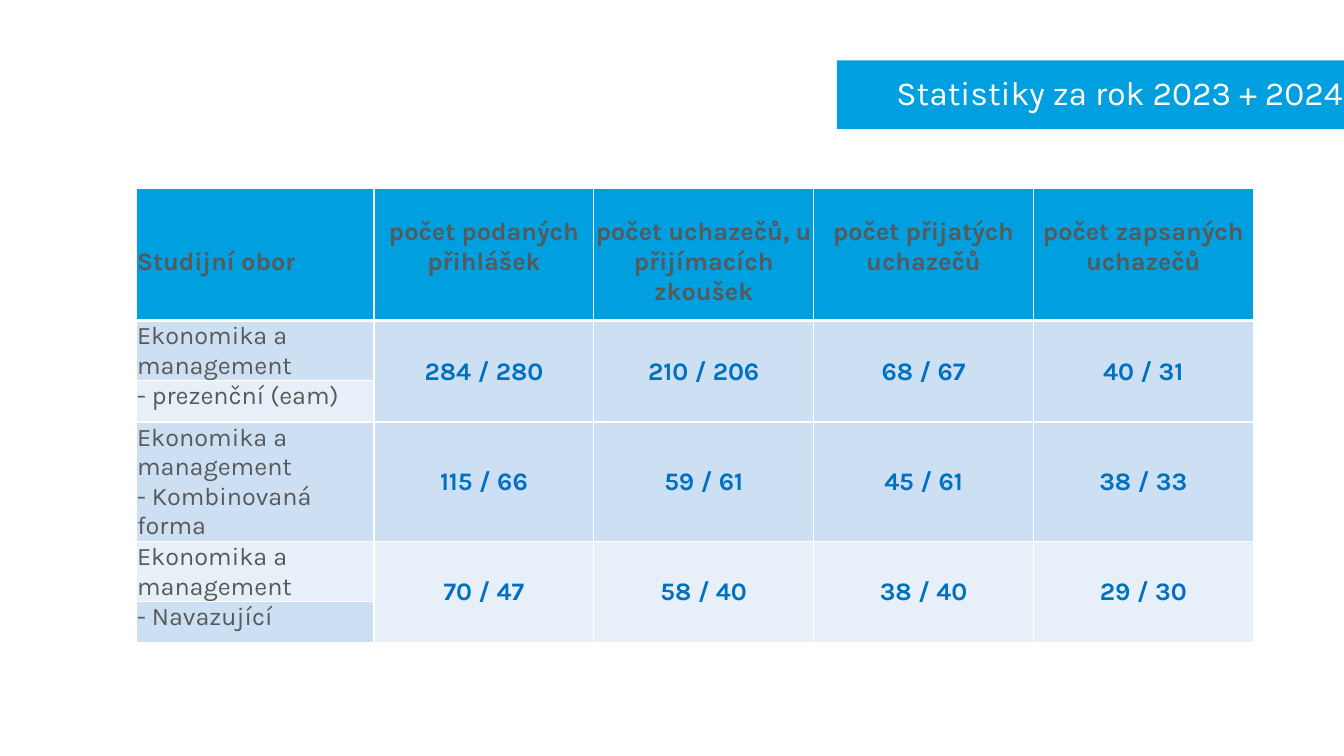
from pptx import Presentation
from pptx.dml.color import RGBColor
from pptx.enum.shapes import MSO_SHAPE
from pptx.enum.text import MSO_ANCHOR, PP_ALIGN
from pptx.oxml import parse_xml
from pptx.oxml.ns import nsdecls
from pptx.util import Inches, Pt

RECT = MSO_SHAPE.RECTANGLE
LEFT, CENTER = PP_ALIGN.LEFT, PP_ALIGN.CENTER
TOP, MIDDLE = MSO_ANCHOR.TOP, MSO_ANCHOR.MIDDLE

BLUE, PALE, LIGHT = "009FDF", "CCDFF3", "E7F0F9"
GRAY, DEEP, WHITE = "595959", "0070C0", "FFFFFF"
LINE = 0.29

HEADS = ["Studijní obor", "počet podaných přihlášek",
         "počet uchazečů, u přijímacích zkoušek",
         "počet přijatých uchazečů", "počet zapsaných uchazečů"]
FIELDS = [("Ekonomika a management", PALE),
          ("- prezenční (eam)", LIGHT),
          ("Ekonomika a management\n- Kombinovaná forma", PALE),
          ("Ekonomika a management", LIGHT),
          ("- Navazující", PALE)]
COUNTS = [(1, 2, PALE, ["284 / 280", "210 / 206", "68 / 67", "40 / 31"]),
          (3, 3, PALE, ["115 / 66", "59 / 61", "45 / 61", "38 / 33"]),
          (4, 5, LIGHT, ["70 / 47", "58 / 40", "38 / 40", "29 / 30"])]


def color(code):
    """Turn a hex string into a colour."""
    return RGBColor.from_string(code)


def write(frame, text, size=18, ink=GRAY, bold=False, align=LEFT, space=None):
    """Fill a text frame, one paragraph for each line."""
    frame.text = text
    for para in frame.paragraphs:
        para.alignment = align
        para.line_spacing = space
        font = para.runs[0].font
        font.name, font.size, font.bold = "Karla", Pt(size), bold
        font.color.rgb = color(ink)


def border(cell, top=1, bottom=1):
    """Draw white lines round a cell."""
    props = cell._tc.get_or_add_tcPr()
    sides = {"L": 1, "R": 1, "T": top, "B": bottom}
    for spot, (side, width) in enumerate(sides.items()):
        props.insert(spot, parse_xml(
            f'<a:ln{side} {nsdecls("a")} w="{Pt(width)}"><a:solidFill>'
            f'<a:srgbClr val="{WHITE}"/></a:solidFill></a:ln{side}>'))


def paint(cell, fill, gap=0.01, anchor=TOP, **lines):
    """Set the fill, margins, anchor and borders of a cell."""
    cell.margin_left = cell.margin_right = Inches(0.01)
    cell.margin_top, cell.margin_bottom = Inches(gap), 0
    cell.vertical_anchor = anchor
    cell.fill.solid()
    cell.fill.fore_color.rgb = color(fill)
    border(cell, **lines)


def add_title(slide, text):
    """Add the blue title band at the right edge."""
    band = slide.shapes.add_shape(
        RECT, Inches(8.3), Inches(0.6), Inches(5.03), Inches(0.68))
    band.shadow.inherit = False
    band.fill.solid()
    band.fill.fore_color.rgb = color(BLUE)
    band.line.fill.background()
    frame = band.text_frame
    frame.word_wrap = False
    frame.vertical_anchor = MIDDLE
    frame.margin_left, frame.margin_right = Inches(0.59), 0
    write(frame, text, size=24, ink=WHITE, space=0.9)


def add_stats(slide):
    """Add the table of applicants by field of study."""
    table = slide.shapes.add_table(
        len(FIELDS) + 1, len(HEADS), Inches(1.35), Inches(1.87),
        Inches(11.08), Inches(3.36)).table
    table.first_row = table.horz_banding = False
    for col, head in enumerate(HEADS):
        table.columns[col].width = Inches(2.18 if col else 2.36)
        cell = table.cell(0, col)
        paint(cell, BLUE, gap=LINE if col else 2 * LINE, bottom=3)
        write(cell.text_frame, head, bold=True, align=CENTER if col else LEFT)
    for row, (field, fill) in enumerate(FIELDS, 1):
        cell = table.cell(row, 0)
        paint(cell, fill, top=3 if row == 1 else 1)
        write(cell.text_frame, field)
    for first, last, fill, values in COUNTS:
        for col, value in enumerate(values, 1):
            for row in range(first, last + 1):
                paint(table.cell(row, col), fill, anchor=MIDDLE,
                      top=3 if row == 1 else 1)
            cell = table.cell(first, col)
            if last > first:
                cell.merge(table.cell(last, col))
            write(cell.text_frame, value, ink=DEEP, bold=True, align=CENTER)
    for index, row in enumerate(table.rows):
        row.height = Inches(0.41 if index else 1.31)


def main():
    """Build the slide and save it."""
    deck = Presentation()
    deck.slide_width, deck.slide_height = Inches(13.33), Inches(7.5)
    slide = deck.slides.add_slide(deck.slide_layouts[6])
    add_stats(slide)
    add_title(slide, "Statistiky za rok 2023 + 2024")
    deck.save("out.pptx")


if __name__ == "__main__":
    main()
